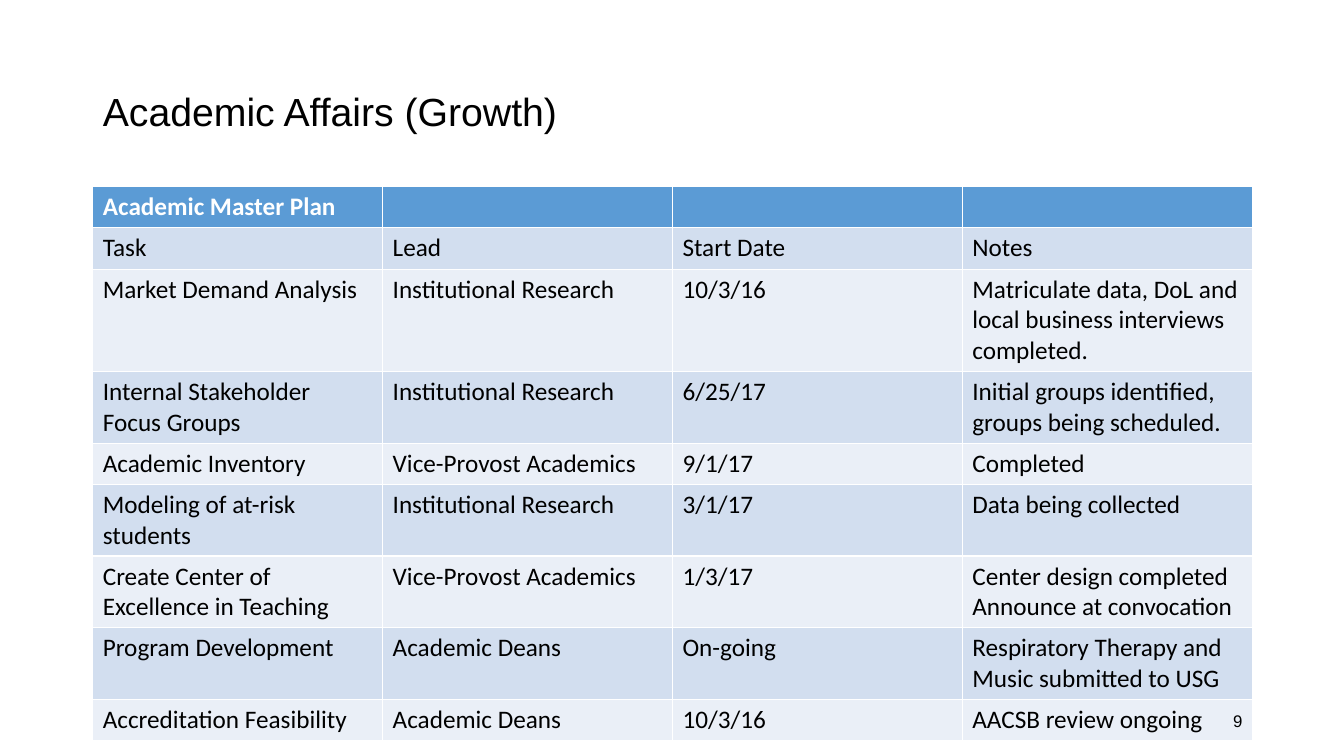
from pptx import Presentation
from pptx.dml.color import RGBColor
from pptx.enum import text as t
from pptx.util import Inches, Pt

BLACK = RGBColor(0x00, 0x00, 0x00)
WHITE = RGBColor(0xFF, 0xFF, 0xFF)
HEAD = RGBColor(0x5B, 0x9B, 0xD5)
BANDS = [RGBColor(0xEA, 0xEF, 0xF7), RGBColor(0xD2, 0xDE, 0xEF)]

PLAN = [
    ("Academic Master Plan", "", "", ""),
    ("Task", "Lead", "Start Date", "Notes"),
    ("Market Demand Analysis", "Institutional Research", "10/3/16",
     "Matriculate data, DoL and local business interviews completed."),
    ("Internal Stakeholder Focus Groups", "Institutional Research", "6/25/17",
     "Initial groups identified, groups being scheduled."),
    ("Academic Inventory", "Vice-Provost Academics", "9/1/17", "Completed"),
    ("Modeling of at-risk students", "Institutional Research", "3/1/17",
     "Data being collected"),
    ("Create Center of Excellence in Teaching", "Vice-Provost Academics",
     "1/3/17", "Center design completed Announce at convocation"),
    ("Program Development", "Academic Deans", "On-going",
     "Respiratory Therapy and Music submitted to USG"),
    ("Accreditation Feasibility", "Academic Deans", "10/3/16",
     "AACSB review ongoing"),
]


def style(para, size, face, color, bold=False):
    font = para.font
    font.size, font.name, font.bold = Pt(size), face, bold
    font.color.rgb = color


prs = Presentation()
prs.slide_width, prs.slide_height = Inches(13.33), Inches(7.5)
slide = prs.slides.add_slide(prs.slide_layouts[5])

title = slide.shapes.title
title.left, title.top = Inches(0.92), Inches(0.4)
title.width, title.height = Inches(11.5), Inches(1.45)
frame = title.text_frame
frame.text = "Academic Affairs (Growth)"
frame.vertical_anchor = t.MSO_ANCHOR.MIDDLE
frame.auto_size = t.MSO_AUTO_SIZE.NONE
para = frame.paragraphs[0]
para.alignment = t.PP_ALIGN.LEFT
para.line_spacing = 0.9
style(para, 28, "Arial", BLACK)

row_h = Inches(0.41)
table = slide.shapes.add_table(
    len(PLAN), len(PLAN[0]), Inches(0.92), Inches(1.85),
    Inches(11.5), row_h * len(PLAN)).table
for r, row in enumerate(PLAN):
    table.rows[r].height = row_h
    for c, words in enumerate(row):
        cell = table.cell(r, c)
        cell.text = words
        cell.fill.solid()
        cell.fill.fore_color.rgb = BANDS[r % 2] if r else HEAD
        style(cell.text_frame.paragraphs[0], 18, "Calibri",
              BLACK if r else WHITE, r == 0)

number = slide.shapes.add_textbox(
    Inches(9.42), Inches(6.95), Inches(3), Inches(0.4))
frame = number.text_frame
frame.word_wrap = True
frame.vertical_anchor = t.MSO_ANCHOR.MIDDLE
frame.text = "9"
para = frame.paragraphs[0]
para.alignment = t.PP_ALIGN.RIGHT
style(para, 12, "Arial", BLACK)

prs.save("out.pptx")
